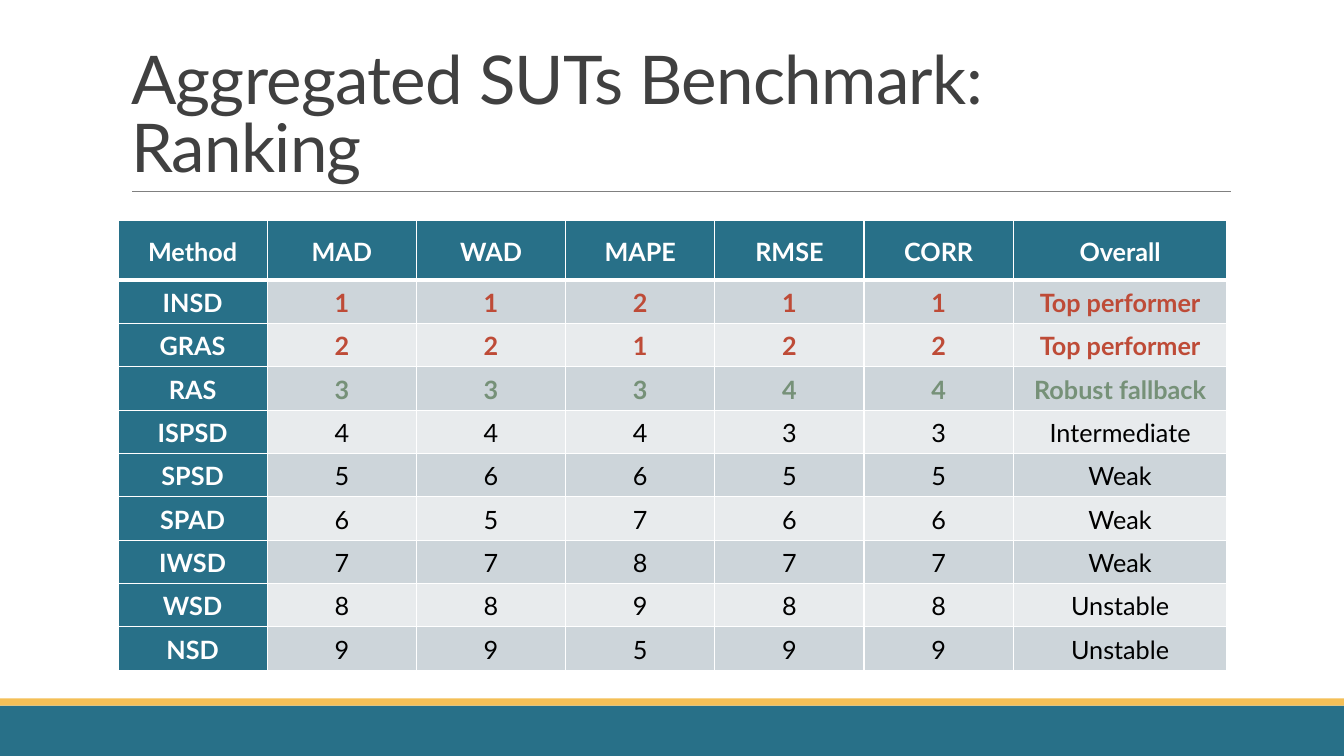
from pptx import Presentation
from pptx import util as u
from pptx.dml.color import RGBColor
from pptx.enum import shapes, text
from pptx.oxml.ns import qn
from lxml import etree

PX = 9144
W, H = 1333, 750
FONT = "Lato"
COLORS = {
    "teal": "287088", "gold": "F4BF57", "rule": "808080", "title": "404040",
    "white": "FFFFFF", "black": "000000", "red": "BE4B37", "green": "769178",
    "odd": "CDD5DA", "even": "E8EBED",
}
HEADER = ["Method", "MAD", "WAD", "MAPE", "RMSE", "CORR", "Overall"]
RANKING = [
    ("INSD", "11211", "Top performer"),
    ("GRAS", "22122", "Top performer"),
    ("RAS", "33344", "Robust fallback"),
    ("ISPSD", "44433", "Intermediate"),
    ("SPSD", "56655", "Weak"),
    ("SPAD", "65766", "Weak"),
    ("IWSD", "77877", "Weak"),
    ("WSD", "88988", "Unstable"),
    ("NSD", "99599", "Unstable"),
]
HIGHLIGHTS = {"Top performer": "red", "Robust fallback": "green"}


def px(n):
    return u.Emu(n * PX)


def rgb(name):
    return RGBColor.from_string(COLORS[name])


def style_run(r, size, color, bold=False):
    r.font.name = FONT
    r.font.size = u.Pt(size)
    r.font.bold = bold
    r.font.color.rgb = rgb(color)


def add_footer(s, x, y, w, h):
    stripe = 7
    for color, top, height in (("teal", y + stripe, h - stripe), ("gold", y, stripe)):
        sp = s.shapes.add_shape(shapes.MSO_SHAPE.RECTANGLE, px(x), px(top), px(w), px(height))
        sp.shadow.inherit = False
        sp.fill.solid()
        sp.fill.fore_color.rgb = rgb(color)
        sp.line.fill.background()


def add_title(s, x, y, w, h):
    inset = 11
    rule = s.shapes.add_connector(
        shapes.MSO_CONNECTOR.STRAIGHT, px(x + inset), px(y + h), px(x + w + inset - 10), px(y + h))
    rule.line.color.rgb = rgb("rule")
    rule.line.width = u.Pt(0.5)
    etree.SubElement(rule._element.spPr, qn("a:effectLst"))

    title = s.shapes.title
    title.left, title.top, title.width, title.height = px(x), px(y), px(w), px(h)
    tf = title.text_frame
    tf.text = "Aggregated SUTs Benchmark: Ranking"
    tf.word_wrap = True
    tf.auto_size = text.MSO_AUTO_SIZE.NONE
    tf.vertical_anchor = text.MSO_ANCHOR.BOTTOM
    p = tf.paragraphs[0]
    p.alignment = text.PP_ALIGN.LEFT
    p.line_spacing = 0.85
    r = p.runs[0]
    style_run(r, 48, "title")
    r.font._element.set("spc", "-50")


def set_borders(cell, widths):
    tcPr = cell._tc.get_or_add_tcPr()
    for side, width in zip("LRTB", widths):
        ln = etree.SubElement(tcPr, qn(f"a:ln{side}"), w=str(u.Pt(width)))
        fill = etree.SubElement(ln, qn("a:solidFill"))
        etree.SubElement(fill, qn("a:srgbClr"), val=COLORS["white"])


def fill_cell(cell, value, fill, color, bold, borders):
    set_borders(cell, borders)
    cell.fill.solid()
    cell.fill.fore_color.rgb = rgb(fill)
    cell.margin_left = cell.margin_right = cell.margin_top = px(2)
    cell.margin_bottom = 0
    cell.vertical_anchor = text.MSO_ANCHOR.MIDDLE
    p = cell.text_frame.paragraphs[0]
    p.text = value
    p.alignment = text.PP_ALIGN.CENTER
    style_run(p.runs[0], 18, color, bold)


def add_ranking(s, x, y, w, h):
    rows = [HEADER] + [[method, *ranks, overall] for method, ranks, overall in RANKING]
    table = s.shapes.add_table(len(rows), len(HEADER), px(x), px(y), px(w), px(h)).table
    table.first_col = True
    rank_w, body_h = 148, 43
    last_w = w - rank_w * (len(HEADER) - 1)
    header_h = h - body_h * len(RANKING)
    for j, col in enumerate(table.columns):
        col.width = px(last_w if j == len(HEADER) - 1 else rank_w)
    for i, row in enumerate(rows):
        table.rows[i].height = px(body_h if i else header_h)
        highlight = HIGHLIGHTS.get(row[-1])
        borders = (1, 1, 3 if i == 1 else 1, 1 if i else 3)
        for j, value in enumerate(row):
            if i == 0 or j == 0:
                look = ("teal", "white", True)
            else:
                look = ("odd" if i % 2 else "even", highlight or "black", bool(highlight))
            fill_cell(table.cell(i, j), value, *look, borders)


def main():
    prs = Presentation()
    prs.slide_width, prs.slide_height = px(W), px(H)
    s = prs.slides.add_slide(prs.slide_layouts[5])
    add_footer(s, 0, 693, W, H - 693)
    add_title(s, 120, 31, 1100, 159)
    add_ranking(s, 117, 219, 1100, 446)
    prs.save("out.pptx")


if __name__ == "__main__":
    main()
